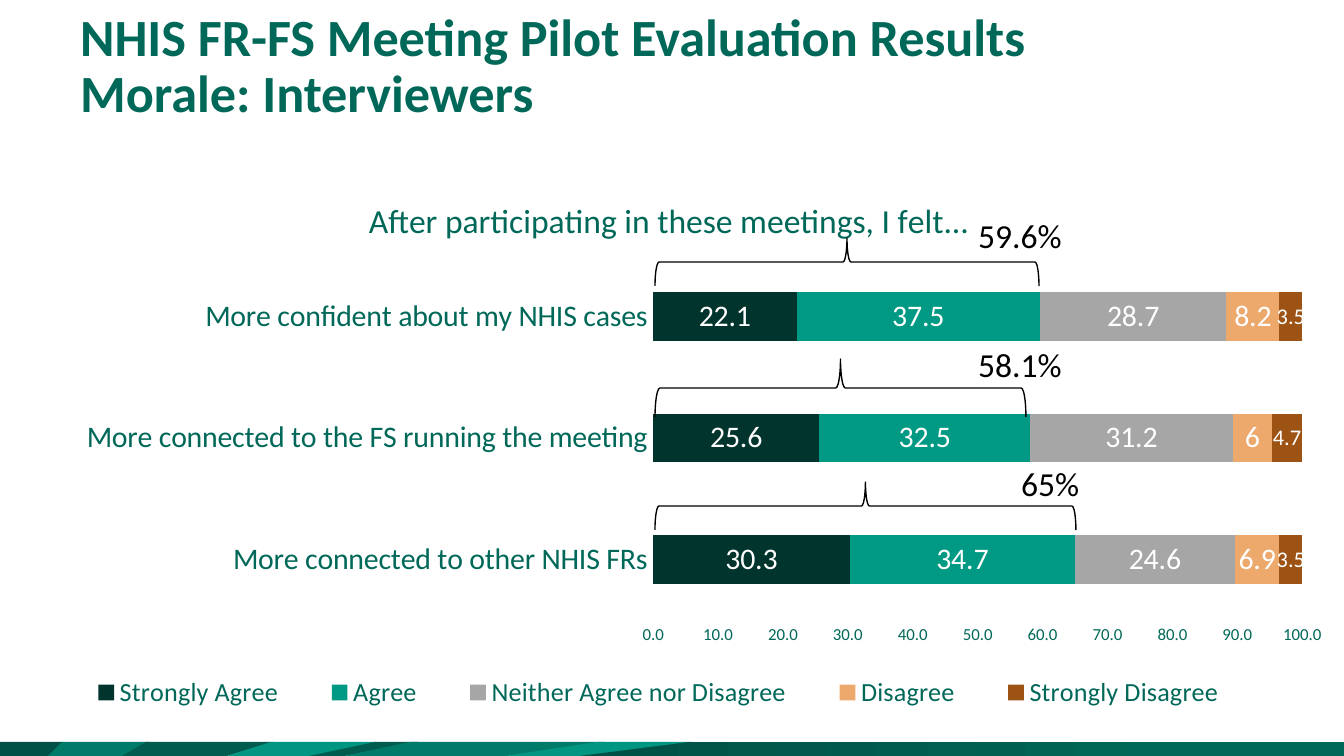
from lxml import etree
from pptx import Presentation
from pptx.chart.data import CategoryChartData
from pptx.dml.color import RGBColor
from pptx.enum.chart import XL_CHART_TYPE, XL_LABEL_POSITION, XL_LEGEND_POSITION, XL_TICK_MARK
from pptx.enum.shapes import MSO_SHAPE
from pptx.enum.text import MSO_ANCHOR
from pptx.oxml.ns import qn
from pptx.util import Pt

BAR_STACKED = XL_CHART_TYPE.BAR_STACKED
LABEL_CENTER = XL_LABEL_POSITION.CENTER
LEGEND_BOTTOM = XL_LEGEND_POSITION.BOTTOM
TICK_NONE = XL_TICK_MARK.NONE
RIGHT_BRACE = MSO_SHAPE.RIGHT_BRACE
TOP, BOTTOM = MSO_ANCHOR.TOP, MSO_ANCHOR.BOTTOM

SLIDE_W, SLIDE_H = 1344, 756
EMU_PER_PX = 9144000 / SLIDE_W
FONT = "Calibri"
GREEN, BLACK, WHITE = "006858", "000000", "FFFFFF"

# Footer ribbons: x of top right, top left, bottom left, bottom right; fill
RIBBON_TOP = 742
RIBBONS = [
    ((63, 0, 0, 52), "005045"),
    ((149, 62, 48, 124), "007A69"),
    ((273, 146, 122, 227), "005C4F"),
    ((376, 271, 227, 314), "009681"),
    ((418, 375, 309, 345), "005C4F"),
    ((605, 410, 344, 507), "007A69"),
    ((692, 597, 505, 585), "009681"),
    ((1344, 691, 579, 1344), None),
]
RIBBON_GRADIENT = [(0, "005045"), (0.78, GREEN)]

CATEGORIES = [
    "More connected to other NHIS FRs",
    "More connected to the FS running the meeting",
    "More confident about my NHIS cases",
]
# Name, values, fill, label size
SERIES = [
    ("Strongly Agree", (30.3, 25.6, 22.1), "00342C", 16),
    ("Agree", (34.7, 32.5, 37.5), "009A84", 16),
    ("Neither Agree nor Disagree", (24.6, 31.2, 28.7), "A6A6A6", 16),
    ("Disagree", (6.9, 6, 8.2), "EDA86C", 16),
    ("Strongly Disagree", (3.5, 4.7, 3.5), "9C5314", 12),
]

# Brace top, width, height; label text, left, top
BRACE_LEFT = 655
TOTALS = [
    (238, 384, 48, "59.6%", 965, 208),
    (359, 371, 58, "58.1%", 965, 337),
    (482, 421, 48, "65%", 1008, 456),
]


def px(length):
    return round(length * EMU_PER_PX)


def color(hex_string):
    return RGBColor.from_string(hex_string)


def set_font(font, size, hex_color=GREEN, bold=False):
    font.name = FONT
    font.size = Pt(size)
    font.bold = bold
    font.color.rgb = color(hex_color)


def add_text(page, text, left, top, width, height, *, size, hex_color=BLACK,
             bold=False, anchor=TOP, line_spacing=None):
    box = page.shapes.add_textbox(px(left), px(top), px(width), px(height))
    frame = box.text_frame
    frame.word_wrap = True
    frame.vertical_anchor = anchor
    para = frame.paragraphs[0]
    if line_spacing:
        para.line_spacing = Pt(line_spacing)
    for number, line in enumerate(text.split("\n")):
        if number:
            para.add_line_break()
        span = para.add_run()
        span.text = line
        set_font(span.font, size, hex_color, bold)


def add_ribbon(page, corners, hex_color):
    ys = (RIBBON_TOP, RIBBON_TOP, SLIDE_H, SLIDE_H)
    points = list(zip(corners, ys))
    builder = page.shapes.build_freeform(*points[0], scale=EMU_PER_PX)
    builder.add_line_segments(points[1:], close=True)
    ribbon = builder.convert_to_shape()
    ribbon.shadow.inherit = False
    ribbon.line.fill.background()
    if hex_color:
        ribbon.fill.solid()
        ribbon.fill.fore_color.rgb = color(hex_color)
        return
    ribbon.fill.gradient()
    ribbon.fill.gradient_angle = 0
    for stop, (position, stop_color) in zip(ribbon.fill.gradient_stops, RIBBON_GRADIENT):
        stop.position = position
        stop.color.rgb = color(stop_color)


def add_brace(page, left, top, width, height):
    # The frame is upright before its quarter turn about the same centre
    shift = (width - height) / 2
    brace = page.shapes.add_shape(RIGHT_BRACE, px(left + shift), px(top - shift),
                                  px(height), px(width))
    brace.rotation = 270
    brace.shadow.inherit = False
    brace.fill.background()
    brace.line.color.rgb = color(BLACK)
    brace.line.width = Pt(0.75)


def set_layout(part, inner=False, **place):
    """Place a chart part by fractions of the chart area."""
    for old in part.findall(qn("c:layout")):
        part.remove(old)
    layout = etree.Element(qn("c:layout"))
    manual = etree.SubElement(layout, qn("c:manualLayout"))
    settings = {"layoutTarget": "inner"} if inner else {}
    settings.update(xMode="edge", yMode="edge", **place)
    for name, value in settings.items():
        etree.SubElement(manual, qn(f"c:{name}"), val=str(value))
    before = [child for child in part
              if child.tag in (qn("c:tx"), qn("c:legendPos"), qn("c:legendEntry"))]
    part.insert(len(before), layout)


def style_axis(axis, size):
    axis.has_major_gridlines = False
    axis.major_tick_mark = TICK_NONE
    axis.format.line.fill.background()
    set_font(axis.tick_labels.font, size)


def style_series(series, hex_color, label_size):
    series.format.fill.solid()
    series.format.fill.fore_color.rgb = color(hex_color)
    labels = series.data_labels
    labels.show_value = True
    labels.position = LABEL_CENTER
    labels.number_format = "0.0"
    labels.number_format_is_linked = False
    set_font(labels.font, label_size, WHITE)
    # Whole values are labelled without a decimal
    for number, value in enumerate(series.values):
        if value == int(value):
            label = series.points[number].data_label
            set_font(label.font, label_size, WHITE)
            label.position = LABEL_CENTER
            element = labels._element.find(qn("c:dLbl"))
            number_format = etree.Element(qn("c:numFmt"), formatCode="General",
                                          sourceLinked="0")
            element.insert(1, number_format)


def add_survey_chart(page):
    data = CategoryChartData(number_format="0.0")
    data.categories = CATEGORIES
    for name, values, _, _ in SERIES:
        data.add_series(name, values)
    chart = page.shapes.add_chart(BAR_STACKED, 0, px(169), px(SLIDE_W), px(566), data).chart
    set_font(chart.font, 10)

    # Title and legend
    title = chart.chart_title
    title.text_frame.text = "After participating in these meetings, I felt..."
    set_font(title.text_frame.paragraphs[0].runs[0].font, 18)
    set_layout(title._element, x=0.27, y=0.04)
    chart.has_legend = True
    chart.legend.position = LEGEND_BOTTOM
    chart.legend.include_in_layout = False
    set_font(chart.legend.font, 14)
    set_layout(chart.legend._element, x=0.04, y=0.89, w=0.9, h=0.07)

    # Bars and axes
    plot = chart.plots[0]
    plot.gap_width = 150
    plot.overlap = 100
    plot.vary_by_categories = False
    for series, (_, _, hex_color, label_size) in zip(plot.series, SERIES):
        style_series(series, hex_color, label_size)
    style_axis(chart.category_axis, 16)
    value_axis = chart.value_axis
    style_axis(value_axis, 9)
    value_axis.minimum_scale, value_axis.maximum_scale = 0, 100
    value_axis.major_unit = 10
    value_axis.tick_labels.number_format = "0.0"
    value_axis.tick_labels.number_format_is_linked = False
    plot_area = chart._chartSpace.chart.plotArea
    set_layout(plot_area, inner=True, x=0.486, y=0.154, w=0.483, h=0.643)


def main():
    deck = Presentation()
    deck.slide_width, deck.slide_height = px(SLIDE_W), px(SLIDE_H)
    page = deck.slides.add_slide(deck.slide_layouts[6])

    # Footer band
    for corners, hex_color in RIBBONS:
        add_ribbon(page, corners, hex_color)

    # Heading and chart
    add_text(page, "NHIS FR-FS Meeting Pilot Evaluation Results\nMorale: Interviewers",
             67, 0, 1210, 130, size=28, hex_color=GREEN, bold=True,
             anchor=BOTTOM, line_spacing=30)
    add_survey_chart(page)

    # Combined agreement per bar
    for top, width, height, text, label_left, label_top in TOTALS:
        add_brace(page, BRACE_LEFT, top, width, height)
        add_text(page, text, label_left, label_top, 176, 54, size=18)

    deck.save("out.pptx")


if __name__ == "__main__":
    main()
